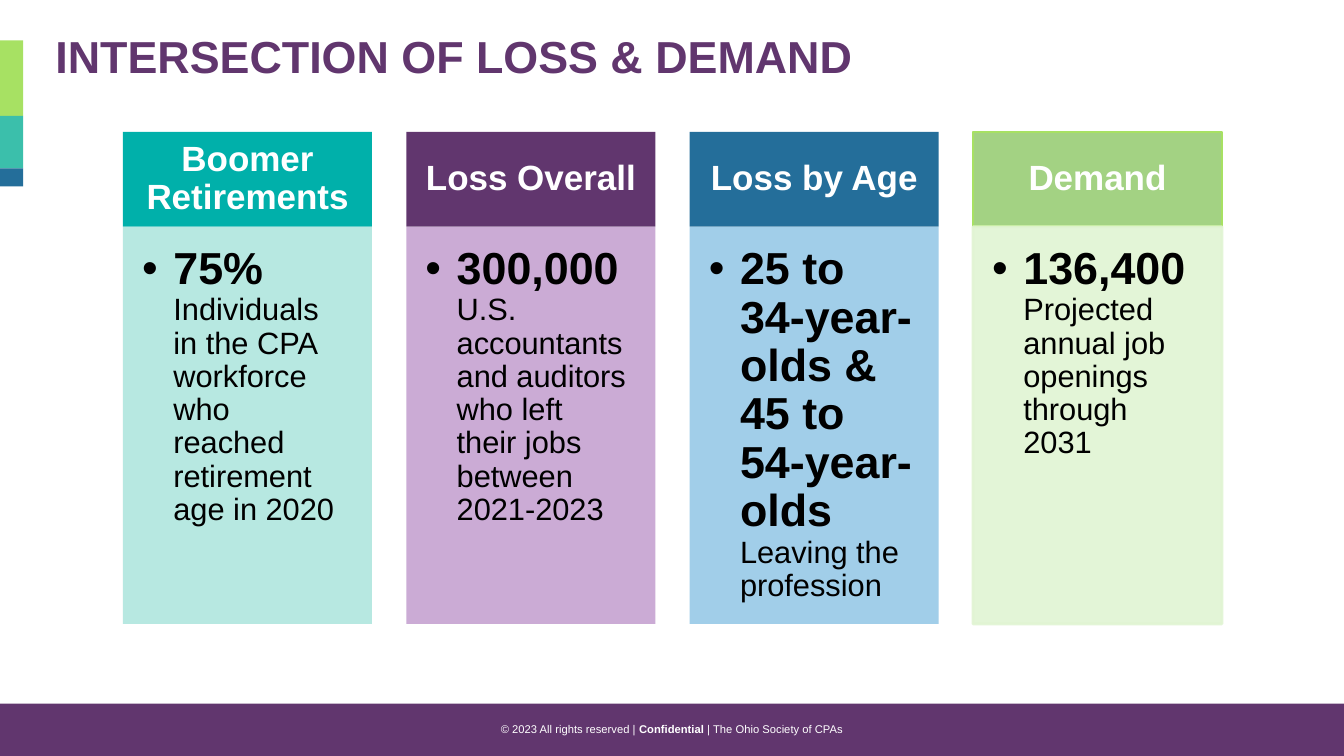
from dataclasses import dataclass

from pptx import Presentation
from pptx.dml.color import RGBColor as RGB
from pptx.enum.shapes import MSO_SHAPE as SHAPE
from pptx.enum.text import MSO_ANCHOR as ANCHOR, PP_ALIGN as ALIGN
from pptx.oxml.ns import qn
from pptx.util import Pt
from lxml.etree import SubElement

PX = 9144  # 100 px to the inch


@dataclass(frozen=True)
class Theme:
    font: str = "Arial"
    purple: str = "61366E"
    lime: str = "A7E163"
    green: str = "3BBFAB"
    blue: str = "246E9A"
    white: str = "FFFFFF"
    black: str = "000000"
    title: int = 32
    heading: int = 25
    figure: int = 32
    body: int = 22
    footer: int = 8


theme = Theme()


def add_block(x, y, w, h, fill, outline=None):
    """Add a shadowless rectangle with wrapped text, outlined only on request."""
    sp = s.shapes.add_shape(SHAPE.RECTANGLE, x * PX, y * PX, w * PX, h * PX)
    sp.shadow.inherit = False
    sp.fill.solid()
    sp.fill.fore_color.rgb = RGB.from_string(fill)
    if outline:
        sp.line.color.rgb = RGB.from_string(outline)
        sp.line.width = Pt(2)
    else:
        sp.line.fill.background()
    sp.text_frame.word_wrap = True
    return sp


def style(r, size, color, bold=False):
    r.font.name = theme.font
    r.font.size = Pt(size)
    r.font.bold = bold
    r.font.color.rgb = RGB.from_string(color)


prs = Presentation()
prs.slide_width, prs.slide_height = 1333 * PX, 750 * PX
s = prs.slides.add_slide(prs.slide_layouts[5])

# Footer band and side accent
add_block(0, 698, 1333, 52, theme.purple)
y = 40
for height, color in ((75, theme.lime), (52, theme.green), (18, theme.blue)):
    add_block(0, y, 23, height, color)
    y += height

footer = s.shapes.add_textbox(0, 712 * PX, 1333 * PX, 24 * PX)
footer.text_frame.word_wrap = True
p = footer.text_frame.paragraphs[0]
p.alignment = ALIGN.CENTER
for text, bold in (("© 2023 All rights reserved | ", False),
                   ("Confidential", True),
                   (" | The Ohio Society of CPAs", False)):
    r = p.add_run()
    r.text = text
    style(r, theme.footer, theme.white, bold)

# Title
title = s.shapes.title
title.left, title.top, title.width, title.height = 45 * PX, 16 * PX, 1242 * PX, 85 * PX
tf = title.text_frame
tf.text = "INTERSECTION OF LOSS & DEMAND"
tf.vertical_anchor = ANCHOR.MIDDLE
p = tf.paragraphs[0]
p.alignment = ALIGN.LEFT
p.line_spacing = 0.9
style(p.runs[0], theme.title, theme.purple, True)

# Cards: heading, figure, description, heading fill, body fill, outlines
cards = (
    ("Boomer Retirements", "75% ",
     "Individuals in the CPA workforce who reached retirement age in 2020",
     "00B0AA", "B0E6DE", None, None),
    ("Loss Overall ", "300,000 ",
     "U.S. accountants and auditors who left their jobs between 2021-2023",
     theme.purple, "C6A2D1", None, None),
    ("Loss by Age", "25 to 34-year-olds & 45 to 54-year-olds ",
     "Leaving the profession",
     theme.blue, "97C9E7", None, None),
    ("Demand", "136,400 ",
     "Projected annual job openings through 2031",
     "A3D283", "E1F4D3", theme.lime, "E1F4D3"),
)
LEFT, TOP, PITCH, WIDTH, HEAD_H, BODY_H = 122, 131, 281, 247, 94, 394

for i, (heading, figure, detail, head_fill, body_fill, head_line, body_line) in enumerate(cards):
    x = LEFT + i * PITCH

    head = add_block(x, TOP, WIDTH, HEAD_H, head_fill, head_line)
    tf = head.text_frame
    tf.margin_left = tf.margin_right = 19 * PX
    tf.margin_top = tf.margin_bottom = 11 * PX
    tf.vertical_anchor = ANCHOR.MIDDLE
    tf.text = heading
    p = tf.paragraphs[0]
    p.alignment = ALIGN.CENTER
    p.line_spacing = 0.9
    style(p.runs[0], theme.heading, theme.white, True)

    body = add_block(x, TOP + HEAD_H, WIDTH, BODY_H, body_fill, body_line)
    for clr in body._element.spPr.iter(qn("a:srgbClr")):
        SubElement(clr, qn("a:alpha"), val="90000")
    tf = body.text_frame
    tf.margin_left = tf.margin_top = 19 * PX
    tf.margin_right, tf.margin_bottom = 25 * PX, 28 * PX
    tf.vertical_anchor = ANCHOR.TOP
    p = tf.paragraphs[0]
    p.alignment = ALIGN.LEFT
    p.line_spacing = 0.9
    pPr = p._p.get_or_add_pPr()
    pPr.set("marL", str(31 * PX))
    pPr.set("indent", str(-31 * PX))
    SubElement(pPr, qn("a:buFont"), typeface=theme.font)
    SubElement(pPr, qn("a:buChar"), char="•")
    r = p.add_run()
    r.text = figure
    style(r, theme.figure, theme.black, True)
    if i == 0:
        p.add_line_break()
    r = p.add_run()
    r.text = detail
    style(r, theme.body, theme.black)

prs.save("out.pptx")
